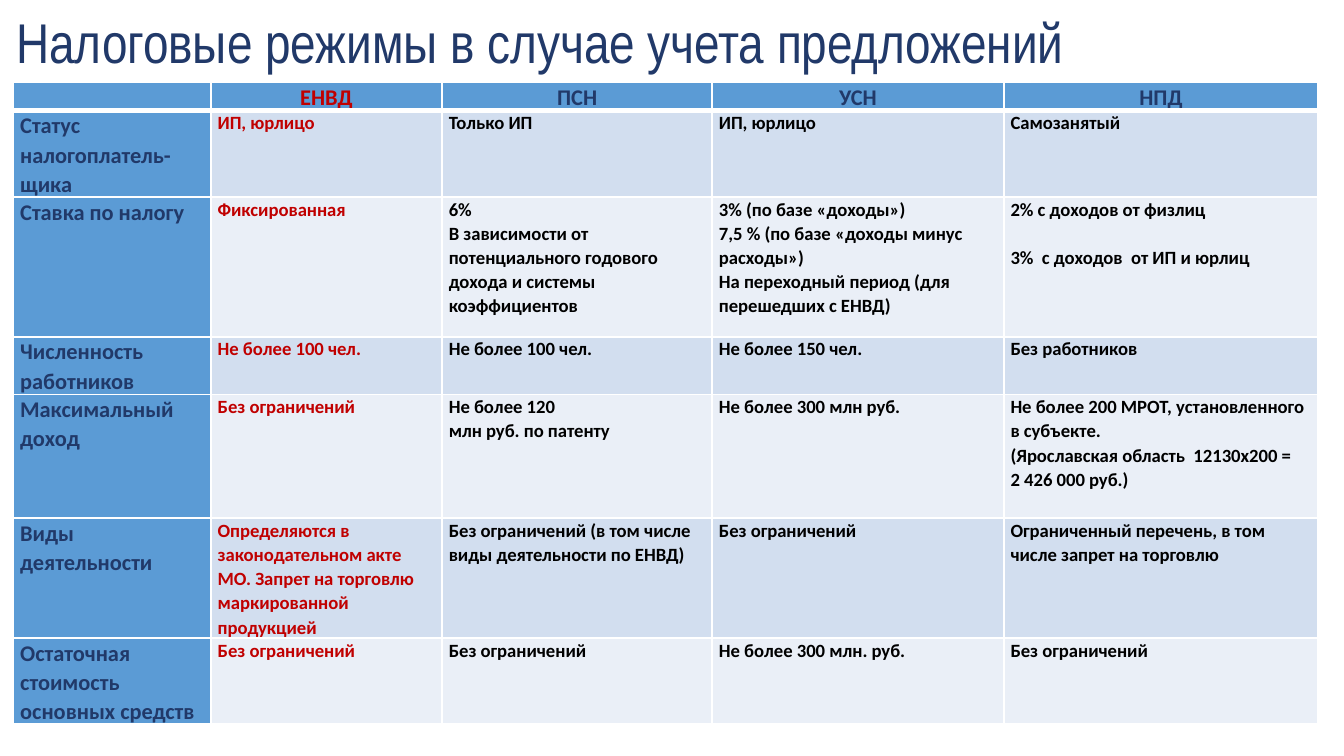
from lxml import etree
from pptx import Presentation
from pptx.dml.color import RGBColor
from pptx.enum.text import MSO_ANCHOR, MSO_AUTO_SIZE, PP_ALIGN
from pptx.oxml.ns import qn
from pptx.util import Inches, Pt

LEFT, CENTER = PP_ALIGN.LEFT, PP_ALIGN.CENTER
MIDDLE, TOP = MSO_ANCHOR.MIDDLE, MSO_ANCHOR.TOP
GROW = MSO_AUTO_SIZE.SHAPE_TO_FIT_TEXT

NAVY = RGBColor(0x21, 0x39, 0x69)
RED = RGBColor(0xC0, 0x00, 0x00)
BLACK = RGBColor(0x00, 0x00, 0x00)
BLUE = RGBColor(0x5B, 0x9B, 0xD5)
DARK = RGBColor(0xD2, 0xDE, 0xEF)
LIGHT = RGBColor(0xEA, 0xEF, 0xF7)

COLS = [1.47, 1.72, 2.01, 2.17, 2.34]
ROWS = [0.21, 0.64, 1.04, 0.43, 0.92, 0.89, 0.64]
CELLS = [
    ["", "ЕНВД", "ПСН", "УСН", "НПД"],
    ["Статус налогоплатель-щика", "ИП, юрлицо", "Только ИП", "ИП, юрлицо", "Самозанятый"],
    ["Ставка по налогу", "Фиксированная",
     "6%\nВ зависимости от потенциального годового дохода и системы коэффициентов",
     "3% (по базе «доходы»)\n7,5 % (по базе «доходы минус расходы»)\n"
     "На переходный период (для перешедших с ЕНВД)",
     "2% с доходов от физлиц\n3%  с доходов  от ИП и юрлиц"],
    ["Численность работников", "Не более 100 чел.", "Не более 100 чел.",
     "Не более 150 чел.", "Без работников"],
    ["Максимальный доход", "Без ограничений", "Не более 120\nмлн руб. по патенту",
     "Не более 300 млн руб.",
     "Не более 200 МРОТ, установленного в субъекте.\n"
     "(Ярославская область  12130х200 =\n2 426 000 руб.)"],
    ["Виды деятельности",
     "Определяются в законодательном акте МО. Запрет на торговлю маркированной продукцией",
     "Без ограничений (в том числе виды деятельности по ЕНВД)", "Без ограничений",
     "Ограниченный перечень, в том числе запрет на торговлю"],
    ["Остаточная стоимость основных средств", "Без ограничений", "Без ограничений",
     "Не более 300 млн. руб.", "Без ограничений"],
]


def write(frame, text, size=10, font="Calibri", color=BLACK, bold=True,
          align=LEFT, line=1.07, gap=0):
    for i, part in enumerate(text.split("\n")):
        para = frame.add_paragraph() if i else frame.paragraphs[0]
        para.alignment = align
        para.line_spacing = line
        para.space_before = Pt(gap if i else 0)
        if not part:
            # An empty cell keeps its row low through its end mark
            etree.SubElement(para._p, qn("a:endParaRPr"), sz=str(size * 100))
            continue
        run = para.add_run()
        run.text = part
        run.font.size = Pt(size)
        run.font.name = font
        run.font.bold = bold
        run.font.color.rgb = color


def edge(cell, side, width):
    line = etree.SubElement(cell._tc.get_or_add_tcPr(), qn("a:ln" + side), w=str(Pt(width)))
    fill = etree.SubElement(line, qn("a:solidFill"))
    etree.SubElement(fill, qn("a:srgbClr"), val="FFFFFF")


# Slide in 16:9
deck = Presentation()
deck.slide_width = Inches(10)
deck.slide_height = Inches(10) * 9 // 16
slide = deck.slides.add_slide(deck.slide_layouts[5])

# Title
title = slide.shapes.title
title.left, title.top = Inches(0.02), Inches(0)
title.width, title.height = Inches(9.78), Inches(0.61)
frame = title.text_frame
frame.word_wrap = True
frame.auto_size = GROW
frame.vertical_anchor = MIDDLE
write(frame, "Налоговые режимы в случае учета предложений", size=30,
      font="Arial Narrow", color=NAVY, bold=False, line=1.0)

# Table grid
table = slide.shapes.add_table(len(ROWS), len(COLS), Inches(0.1), Inches(0.61),
                               Inches(sum(COLS)), Inches(sum(ROWS))).table
for col, width in zip(table.columns, COLS):
    col.width = Inches(width)
for row, height in zip(table.rows, ROWS):
    row.height = Inches(height)

# Cells: blue heads, banded body, red second column
for r, texts in enumerate(CELLS):
    for c, text in enumerate(texts):
        cell = table.cell(r, c)
        head = r == 0 or c == 0
        cell.margin_left = cell.margin_right = Inches(0.05)
        cell.margin_top = cell.margin_bottom = Inches(0)
        cell.vertical_anchor = TOP
        for side in "LRTB":
            edge(cell, side, 3 if r == 0 and side == "B" else 1)
        cell.fill.solid()
        cell.fill.fore_color.rgb = BLUE if head else DARK if r % 2 else LIGHT
        write(cell.text_frame, text, size=12 if head else 10,
              color=RED if c == 1 else NAVY if head else BLACK,
              align=CENTER if r == 0 else LEFT,
              gap=13 if (r, c) == (2, 4) else 0)

deck.save("out.pptx")
